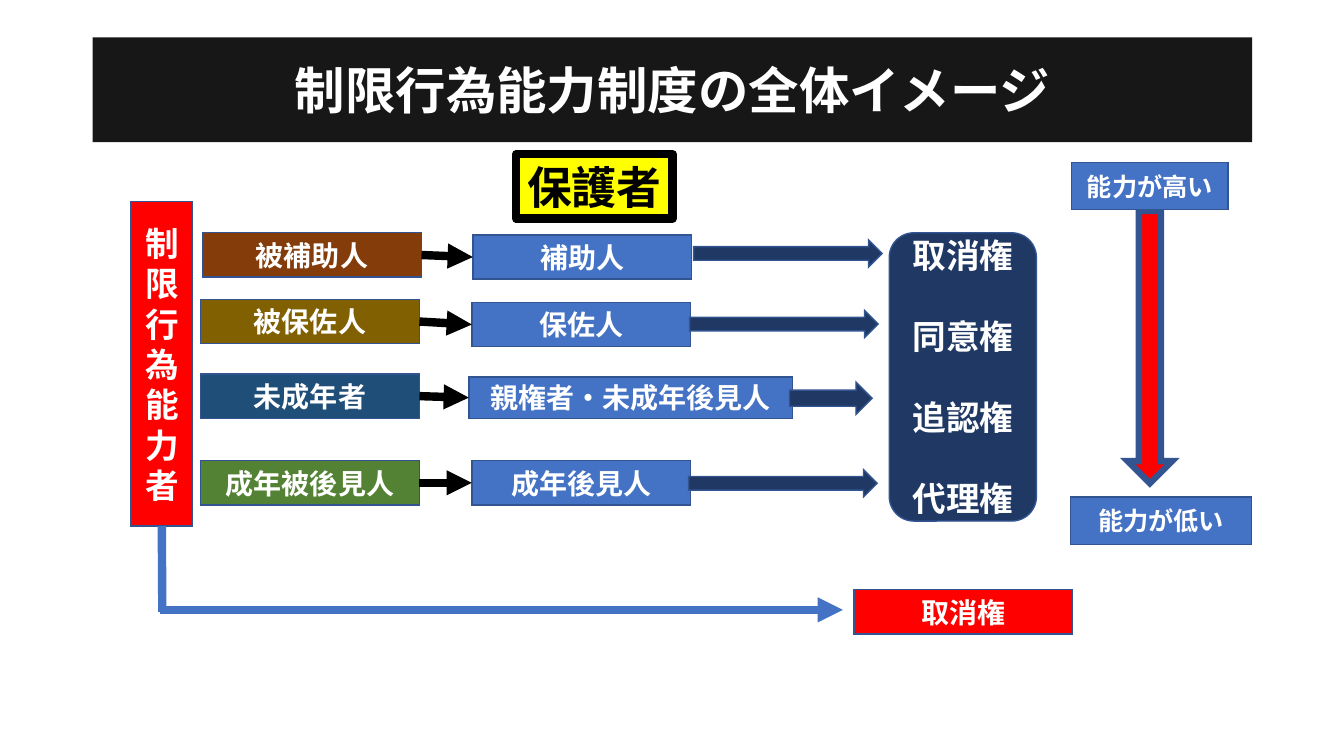
from pptx import Presentation
from pptx.dml.color import RGBColor
from pptx.enum.shapes import MSO_CONNECTOR as Connector, MSO_SHAPE as Shape
from pptx.enum.text import MSO_ANCHOR as Anchor, PP_ALIGN as Align
from pptx.oxml.ns import qn
from pptx.util import Inches, Pt
from lxml.etree import SubElement

FONT = "Noto Sans CJK JP"
COLORS = {
    "black": "000000", "white": "FFFFFF", "title": "181717", "red": "FF0000",
    "yellow": "FFFF00", "blue": "4472C4", "navy": "203864", "edge": "325491",
    "brown": "843C0B", "olive": "806000", "teal": "1F4E79", "green": "548235",
}
TITLE = ("制限行為能力制度の全体イメージ", (0.92, 0.37, 11.5, 1.04))
GROUP = ("制限行為能力者", (1.3, 2, 0.61, 3.22))
GUARDIAN_HEADING = ("保護者", (5.12, 1.53, 1.55, 0.64))
RIGHTS = (["取消権", "同意権", "追認権", "代理権"], (8.82, 2.31, 1.46, 2.86))
ROWS = [
    ("被補助人", "brown", (2.01, 2.31, 2.17, 0.44),
     "補助人", (4.69, 2.33, 2.17, 0.44), (6.88, 2.38, 1.87, 0.27)),
    ("被保佐人", "olive", (1.99, 2.97, 2.17, 0.44),
     "保佐人", (4.68, 3, 2.17, 0.44), (6.84, 3.08, 1.87, 0.27)),
    ("未成年者", "teal", (1.99, 3.71, 2.17, 0.44),
     "親権者・未成年後見人", (4.65, 3.74, 3.21, 0.41), (7.83, 3.79, 0.82, 0.32)),
    ("成年被後見人", "green", (1.99, 4.57, 2.17, 0.44),
     "成年後見人", (4.68, 4.57, 2.17, 0.44), (6.83, 4.66, 1.87, 0.27)),
]
ABILITY_ARROW = (10.02, 3.19, 2.77, 0.44)
ABILITY_LABELS = [
    ("能力が低い", (10.62, 4.93, 1.79, 0.47)),
    ("能力が高い", (10.63, 1.61, 1.55, 0.47)),
]
CANCEL = ("取消権", (8.47, 5.85, 2.17, 0.44))
CANCEL_ARROW = ((1.59, 6.05), (8.36, 6.05))
CANCEL_STEM = ((1.61, 5.22), (1.61, 6.07))


def rgb(name):
    return RGBColor.from_string(COLORS[name])


def add_box(page, place, fill, lines=(), size=20, kind=Shape.RECTANGLE, color="white",
            edge="edge", width=1, join="miter", gap=0, wrap=True):
    box = page.shapes.add_shape(kind, *map(Inches, place))
    box.shadow.inherit = False
    box.fill.solid()
    box.fill.fore_color.rgb = rgb(fill)
    if edge:
        box.line.color.rgb = rgb(edge)
        box.line.width = Pt(width)
        SubElement(box.line._get_or_add_ln(), qn("a:" + join))
    else:
        box.line.fill.background()
    frame = box.text_frame
    frame.word_wrap = wrap
    frame.vertical_anchor = Anchor.MIDDLE
    for index, line in enumerate(lines):
        para = frame.paragraphs[0] if index == 0 else frame.add_paragraph()
        para.alignment = Align.CENTER
        if index and gap:
            para.space_before = Pt(gap)
        span = para.add_run()
        span.text = line
        for name, value in {"name": FONT, "size": Pt(size), "bold": True}.items():
            setattr(span.font, name, value)
        span.font.color.rgb = rgb(color)
        fonts = span.font._element
        SubElement(fonts, qn("a:ea"), typeface=FONT)
    return box


def add_line(page, start, end, color, arrow=True):
    line = page.shapes.add_connector(Connector.STRAIGHT, *map(Inches, start + end))
    line.line.color.rgb = rgb(color)
    line.line.width = Pt(6)
    if arrow:
        SubElement(line.line._get_or_add_ln(), qn("a:tailEnd"), type="triangle")
    SubElement(line._element.spPr, qn("a:effectLst"))
    return line


def main():
    deck = Presentation()
    deck.slide_width, deck.slide_height = Inches(13.33), Inches(7.5)
    page = deck.slides.add_slide(deck.slide_layouts[6])

    text, place = TITLE
    add_box(page, place, "title", [text], 36, edge=None)
    text, place = GROUP
    group = add_box(page, place, "red", [text], 24)

    for person, fill, person_place, guardian, guardian_place, arrow_place in ROWS:
        person_box = add_box(page, person_place, fill, [person])
        guardian_box = add_box(page, guardian_place, "blue", [guardian])
        link = add_line(page, (0, 0), (1, 1), "black")
        link.begin_connect(person_box, 3)
        link.end_connect(guardian_box, 1)
        add_box(page, arrow_place, "navy", kind=Shape.RIGHT_ARROW)

    lines, place = RIGHTS
    add_box(page, place, "navy", lines, 24, Shape.ROUNDED_RECTANGLE, gap=29)
    text, place = GUARDIAN_HEADING
    add_box(page, place, "yellow", [text], 32, color="black", edge="black",
            width=6, join="round", wrap=False)

    ability = add_box(page, ABILITY_ARROW, "red", kind=Shape.STRIPED_RIGHT_ARROW, width=4.5)
    ability.rotation = 90
    for text, place in ABILITY_LABELS:
        add_box(page, place, "blue", [text], 18)

    text, place = CANCEL
    add_box(page, place, "red", [text])
    add_line(page, *CANCEL_ARROW, "blue")
    stem = add_line(page, *CANCEL_STEM, "blue", arrow=False)
    stem.begin_connect(group, 2)

    deck.save("out.pptx")


if __name__ == "__main__":
    main()
